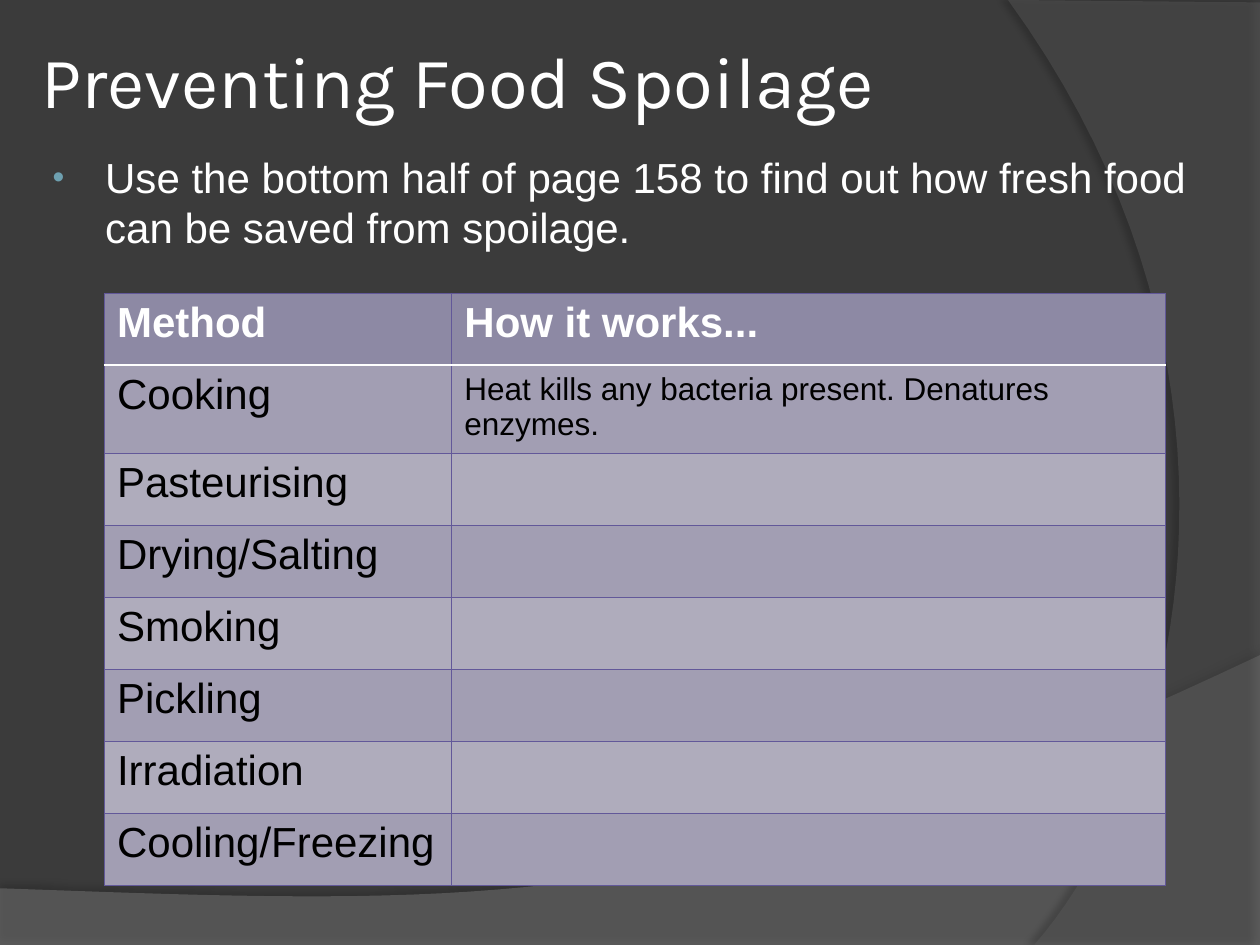
from lxml import etree
from pptx import Presentation
from pptx.dml.color import RGBColor
from pptx.enum.text import MSO_ANCHOR, MSO_AUTO_SIZE, PP_ALIGN
from pptx.oxml import parse_xml
from pptx.oxml.ns import qn
from pptx.util import Pt

MIDDLE = MSO_ANCHOR.MIDDLE
FIXED = MSO_AUTO_SIZE.NONE
LEFT = PP_ALIGN.LEFT

COLORS = {
    "back": "3B3B3B", "wave": "7F7F7F", "arc": "5E5E5E",
    "white": "FFFFFF", "black": "000000", "bullet": "6EA0B0",
    "head": "8D89A4", "dark": "A29EB3", "light": "AFACBC", "rule": "625899",
}
NS = 'xmlns:a="http://schemas.openxmlformats.org/drawingml/2006/main"'
ROWS = [
    ("Method", "How it works..."),
    ("Cooking", "Heat kills any bacteria present. Denatures enzymes."),
    ("Pasteurising", ""),
    ("Drying/Salting", ""),
    ("Smoking", ""),
    ("Pickling", ""),
    ("Irradiation", ""),
    ("Cooling/Freezing", ""),
]


def rgb(name):
    return RGBColor.from_string(COLORS[name])


def paint(fill, name):
    fill.solid()
    fill.fore_color.rgb = rgb(name)


def add_run(para, text, size, color, font="Arial", bold=False):
    run = para.add_run()
    run.text = text
    run.font.name, run.font.size, run.font.bold = font, Pt(size), bold
    run.font.color.rgb = rgb(color)


def curve(a, b, c, d, steps=40):
    """Points on a cubic curve from a to d, with b and c as its handles."""
    points = []
    for i in range(1, steps + 1):
        t = i / steps
        u = 1 - t
        points.append(tuple(
            u**3 * p + 3 * u * u * t * q + 3 * u * t * t * r + t**3 * s
            for p, q, r, s in zip(a, b, c, d)))
    return points


def add_sweep(slide, points, color, alpha, shade, blur, dist, angle):
    """Translucent outline with a soft shadow."""
    (x, y), *rest = points
    build = slide.shapes.build_freeform(round(x * 100), round(y * 100), Pt(1) / 100)
    build.add_line_segments([(round(x * 100), round(y * 100)) for x, y in rest])
    shape = build.convert_to_shape()
    paint(shape.fill, color)
    shape.line.fill.background()
    tint = shape.element.spPr.find(qn("a:solidFill"))[0]
    etree.SubElement(tint, qn("a:alpha")).set("val", str(alpha * 1000))
    shape.element.spPr.append(parse_xml(
        f'<a:effectLst {NS}><a:outerShdw blurRad="{Pt(blur)}" dist="{Pt(dist)}" '
        f'dir="{angle * 60000}" algn="ctr" rotWithShape="0">'
        f'<a:srgbClr val="{COLORS["black"]}"><a:alpha val="{shade * 1000}"/>'
        '</a:srgbClr></a:outerShdw></a:effectLst>'))


def add_backdrop(slide, x, y, w, h):
    paint(slide.background.fill, "back")
    low = [(x, y + 507.6), (x, y + h), (x + w, y + h), (x + w, y + 374.4)]
    low += curve(low[-1], (x + 402.5, y + 524.9), (x + 281.5, y + 517.7), low[0])
    add_sweep(slide, low, "wave", 45, 35, 4, 3.5, 270)
    side = [(x + w, y + 1.4), (x + w, y + h), (x + 591, y + h)]
    side += curve(side[-1], (x + 673.2, y + 445.7), (x + 733, y + 216), (x + 576, y))
    add_sweep(slide, side + side[:1], "arc", 40, 45, 4, 4, 180)


def add_title(slide, x, y, w, h):
    title = slide.shapes.title
    title.element.getparent().append(title.element)  # in front of the backdrop
    title.left, title.top, title.width, title.height = map(Pt, (x, y, w, h))
    frame = title.text_frame
    frame.auto_size, frame.vertical_anchor = FIXED, MIDDLE
    frame.margin_left = frame.margin_right = Pt(3.6)
    frame.margin_top = frame.margin_bottom = Pt(3.6)
    para = frame.paragraphs[0]
    para.alignment = LEFT
    add_run(para, "Preventing Food Spoilage", 41.4, "white", "Karla")


def add_task(slide, x, y, w, h):
    frame = slide.shapes.add_textbox(*map(Pt, (x, y, w, h))).text_frame
    frame.word_wrap = True
    para = frame.paragraphs[0]
    para.space_before = Pt(4.8)
    add_run(para, "Use the bottom half of page 158 to find out how fresh food "
            "can be saved from spoilage.", 24, "white")
    props = para._p.get_or_add_pPr()
    props.set("marL", str(Pt(33)))
    props.set("indent", str(Pt(-30)))
    for xml in (f'<a:buClr {NS}><a:srgbClr val="{COLORS["bullet"]}"/></a:buClr>',
                f'<a:buSzPct {NS} val="80000"/>',
                f'<a:buFont {NS} typeface="Arial"/>',
                f'<a:buChar {NS} char="•"/>'):
        props.append(parse_xml(xml))


def set_edges(cell, row):
    """Thin rules all round, with a thick white one under the header."""
    props = cell._tc.get_or_add_tcPr()
    for i, side in enumerate(("lnL", "lnR", "lnT", "lnB")):
        thick = (side, row) in (("lnB", 0), ("lnT", 1))
        color, width = ("white", 1.5) if thick else ("rule", 0.75)
        props.insert(i, parse_xml(
            f'<a:{side} {NS} w="{Pt(width)}"><a:solidFill>'
            f'<a:srgbClr val="{COLORS[color]}"/></a:solidFill></a:{side}>'))


def add_grid(slide, x, y, w, h):
    table = slide.shapes.add_table(len(ROWS), 2, *map(Pt, (x, y, w, h))).table
    first, tall = 198.5, 47.5
    table.columns[0].width, table.columns[1].width = Pt(first), Pt(w - first)
    for r, texts in enumerate(ROWS):
        table.rows[r].height = Pt(tall if r == 1 else (h - tall) / (len(ROWS) - 1))
        band = "head" if r == 0 else "dark" if r % 2 else "light"
        for c, text in enumerate(texts):
            cell = table.cell(r, c)
            paint(cell.fill, band)
            set_edges(cell, r)
            if text:
                add_run(cell.text_frame.paragraphs[0], text,
                        18 if r and c else 24,
                        "black" if r else "white", bold=r == 0)


def main():
    deck = Presentation()
    deck.slide_width, deck.slide_height = Pt(720), Pt(540)
    slide = deck.slides.add_slide(deck.slide_layouts[5])
    add_backdrop(slide, 0, 0, 720, 540)
    add_title(slide, 20, 15, 680, 61)
    add_task(slide, 20, 83, 680, 442)
    add_grid(slide, 59.7, 167.6, 606.5, 335.5)
    deck.save("out.pptx")


if __name__ == "__main__":
    main()
